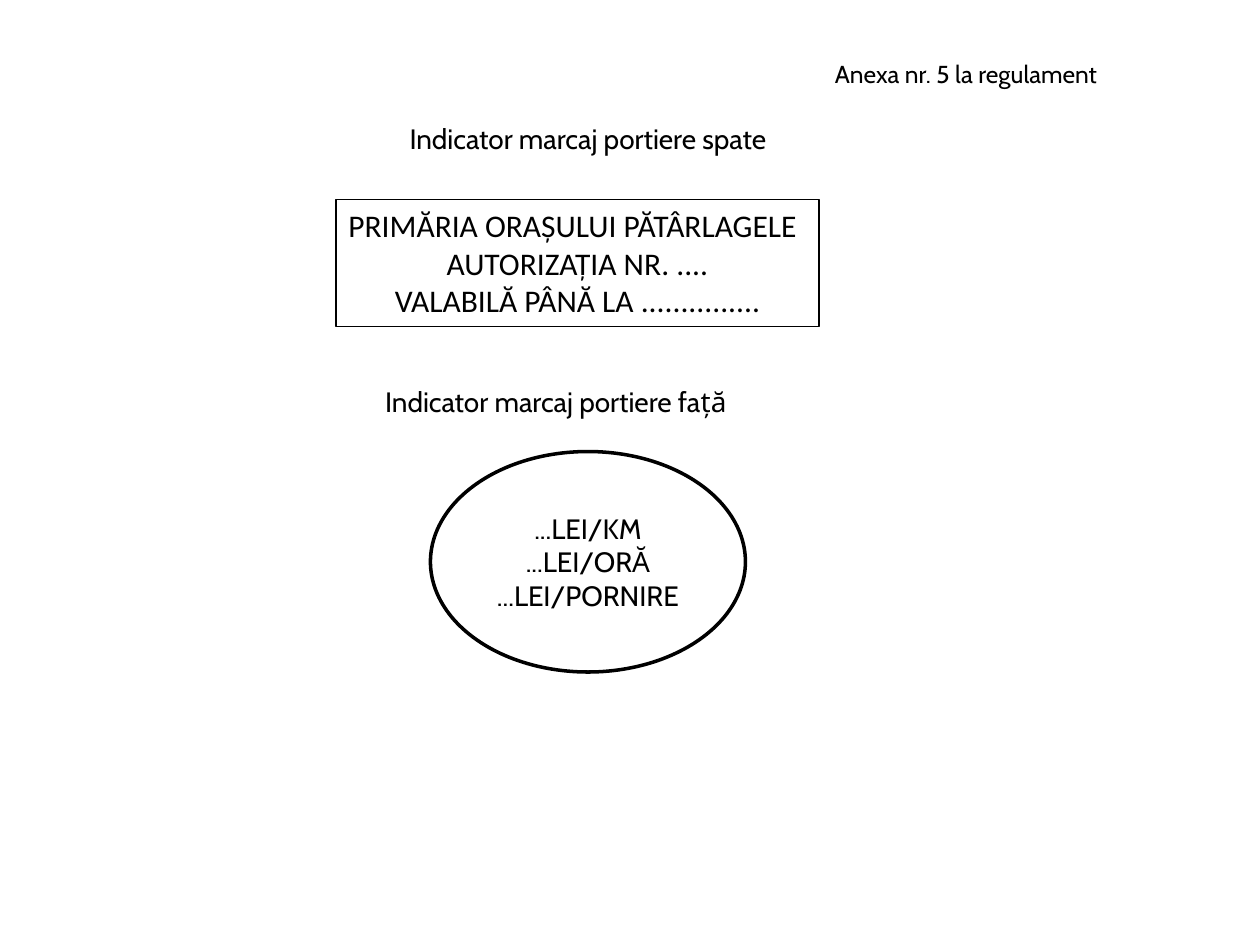
"""Build the taxi door marking annex slide."""
import dataclasses
import typing

import pptx
import pptx.dml.color
import pptx.enum.shapes
import pptx.enum.text
import pptx.util

Pt = pptx.util.Pt
ALIGN = pptx.enum.text.PP_ALIGN
ANCHOR = pptx.enum.text.MSO_ANCHOR
SHAPE = pptx.enum.shapes.MSO_SHAPE


@dataclasses.dataclass(frozen=True)
class Theme:
    ink: pptx.dml.color.RGBColor = pptx.dml.color.RGBColor(0, 0, 0)
    paper: pptx.dml.color.RGBColor = pptx.dml.color.RGBColor(255, 255, 255)
    heading_font: str = "Cabin"
    plate_font: str = "Calibri"
    annex_size: float = 14
    heading_size: float = 16
    plate_size: float = 18


THEME = Theme()


class Frame(typing.NamedTuple):
    left: float
    top: float
    width: float
    height: float


@dataclasses.dataclass(frozen=True)
class Label:
    frame: Frame
    lines: tuple[str, ...]
    size: float = THEME.heading_size
    font: str = THEME.heading_font
    first_align: ALIGN = ALIGN.CENTER
    anchor: ANCHOR = ANCHOR.TOP
    outline: SHAPE | None = None
    line_width: float = 0
    filled: bool = False


LABELS = (
    Label(Frame(456, 12, 192, 60), ("Anexa nr. 5 la regulament",),
          size=THEME.annex_size, anchor=ANCHOR.MIDDLE),
    Label(Frame(198, 66, 276, 26.6), ("Indicator marcaj portiere spate",)),
    Label(Frame(192, 114, 276, 72.7),
          ("PRIMĂRIA ORAȘULUI PĂTÂRLAGELE", "AUTORIZAȚIA NR. ....",
           "VALABILĂ PÂNĂ LA ..............."),
          size=THEME.plate_size, font=THEME.plate_font, first_align=ALIGN.LEFT,
          outline=SHAPE.RECTANGLE, line_width=0.75),
    Label(Frame(213, 216, 246, 26.6), ("Indicator marcaj portiere față",),
          first_align=ALIGN.LEFT),
    Label(Frame(246, 258, 180, 126), ("...LEI/KM", "...LEI/ORĂ", "...LEI/PORNIRE"),
          anchor=ANCHOR.MIDDLE, outline=SHAPE.OVAL, line_width=2, filled=True),
)


def apply_format(target: typing.Any, values: dict[str, typing.Any]) -> None:
    """Set each named attribute on the target."""
    for name, value in values.items():
        setattr(target, name, value)


def add_box(page: typing.Any, label: Label) -> typing.Any:
    """Add the text box or outlined shape that carries a label."""
    place = [Pt(length) for length in label.frame]
    if label.outline is None:
        return page.shapes.add_textbox(*place)
    box = page.shapes.add_shape(label.outline, *place)
    box.shadow.inherit = False
    if label.filled:
        box.fill.solid()
        box.fill.fore_color.rgb = THEME.paper
    else:
        box.fill.background()
    box.line.color.rgb = THEME.ink
    box.line.width = Pt(label.line_width)
    return box


def draw_label(page: typing.Any, label: Label) -> None:
    """Draw a label with one paragraph for each line."""
    frame = add_box(page, label).text_frame
    apply_format(frame, {"word_wrap": True, "vertical_anchor": label.anchor})
    for index, line in enumerate(label.lines):
        para = frame.add_paragraph() if index else frame.paragraphs[0]
        para.alignment = ALIGN.CENTER if index else label.first_align
        span = para.add_run()
        span.text = line
        apply_format(span.font, {"name": label.font, "size": Pt(label.size)})
        span.font.color.rgb = THEME.ink


def main() -> None:
    """Build and save the deck."""
    deck = pptx.Presentation()
    apply_format(deck, {"slide_width": Pt(720), "slide_height": Pt(540)})
    page = deck.slides.add_slide(deck.slide_layouts[6])
    for label in LABELS:
        draw_label(page, label)
    deck.save("out.pptx")


if __name__ == "__main__":
    main()
